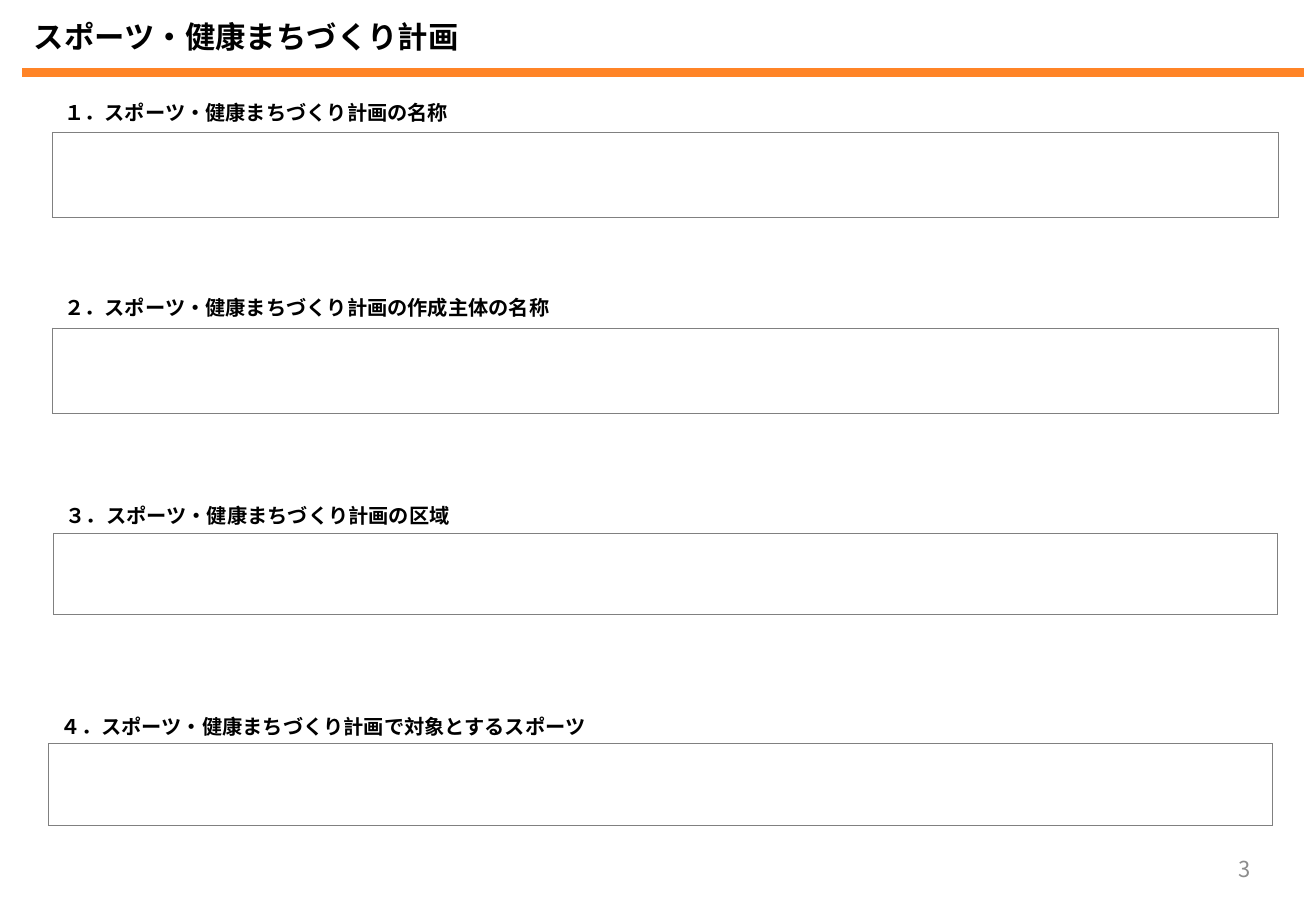
from pptx import Presentation
from pptx import util as u
from pptx.dml.color import RGBColor
from pptx.enum import shapes, text
from pptx.oxml.xmlchemy import OxmlElement

FONT = "Noto Sans CJK JP"
HUES = {"ink": "000000", "bar": "FF8427", "edge": "808080", "page": "8C8C8C"}
TITLE = {"size": u.Pt(18), "bold": True}
LABEL = {"size": u.Pt(12), "bold": True}
PAGE = {"size": u.Pt(13), "bold": False}

# Heights of label and box, then the space under the label, in cm
TALL = (0.99, 1.78, 0.13)
SLIM = (0.79, 1.7, 0.07)
# Label, left, top, width, heights
FORMS = [
    ("１．スポーツ・健康まちづくり計画の名称", 1.09, 1.78, 25.63, TALL),
    ("２．スポーツ・健康まちづくり計画の作成主体の名称", 1.09, 5.87, 25.63, TALL),
    ("３．スポーツ・健康まちづくり計画の区域", 1.12, 10.36, 25.58, SLIM),
    ("４．スポーツ・健康まちづくり計画で対象とするスポーツ", 1.02, 14.76, 25.58, SLIM),
]


def write(frame, words, style, hue="ink", align=text.PP_ALIGN.LEFT):
    para = frame.paragraphs[0]
    para.alignment = align
    run = para.add_run()
    run.text = words
    for key, value in {"name": FONT, **style}.items():
        setattr(run.font, key, value)
    run.font.color.rgb = RGBColor.from_string(HUES[hue])
    asian = OxmlElement("a:ea")
    asian.set("typeface", FONT)
    run.font._element.append(asian)


def add_text(slide, place, words, style, look, **more):
    box = slide.shapes.add_textbox(*map(u.Cm, place))
    for key, value in {"word_wrap": True, **look}.items():
        setattr(box.text_frame, key, value)
    write(box.text_frame, words, style, **more)


def add_rule(slide, left, right, top):
    rule = slide.shapes.add_connector(
        shapes.MSO_CONNECTOR.STRAIGHT, u.Cm(left), u.Cm(top), u.Cm(right), u.Cm(top))
    rule.line.color.rgb = RGBColor.from_string(HUES["bar"])
    rule.line.width = u.Pt(5)
    rule._element.spPr.append(OxmlElement("a:effectLst"))


def edge(cell, sides):
    """Draw thin borders on the given sides, in the order L, R, T, B."""
    props = cell._tc.get_or_add_tcPr()
    for side in sides:
        line = OxmlElement(f"a:ln{side}")
        line.set("w", str(u.Pt(0.5)))
        fill = OxmlElement("a:solidFill")
        color = OxmlElement("a:srgbClr")
        color.set("val", HUES["edge"])
        fill.append(color)
        line.append(fill)
        props.append(line)


def add_form(slide, words, left, top, width, heights):
    """Add a label row over an empty box to fill in."""
    *rows, gap = heights
    frame = slide.shapes.add_table(
        2, 1, u.Cm(left), u.Cm(top), u.Cm(width), u.Cm(sum(rows)))
    table = frame.table
    table.first_row = table.horz_banding = False
    for row, height, sides in zip(table.rows, rows, ("B", "LRTB")):
        row.height = u.Cm(height)
        edge(row.cells[0], sides)
        row.cells[0].fill.background()
    label = table.cell(0, 0)
    look = {"margin_top": 0, "margin_bottom": u.Cm(gap),
            "vertical_anchor": text.MSO_ANCHOR.BOTTOM}
    for key, value in look.items():
        setattr(label, key, value)
    write(label.text_frame, words, LABEL)


def main():
    deck = Presentation()
    deck.slide_width, deck.slide_height = u.Cm(27.51), u.Cm(19.05)
    slide = deck.slides.add_slide(deck.slide_layouts[6])
    add_rule(slide, 0.46, 27.25, 1.52)
    add_text(slide, (0.46, 0.38, 21.11, 1.02), "スポーツ・健康まちづくり計画", TITLE,
             {"margin_top": 0, "margin_bottom": 0})
    for form in FORMS:
        add_form(slide, *form)
    add_text(slide, (19.96, 17.65, 6.43, 1.02), "3", PAGE,
             {"vertical_anchor": text.MSO_ANCHOR.MIDDLE},
             hue="page", align=text.PP_ALIGN.RIGHT)
    deck.save("out.pptx")


if __name__ == "__main__":
    main()
